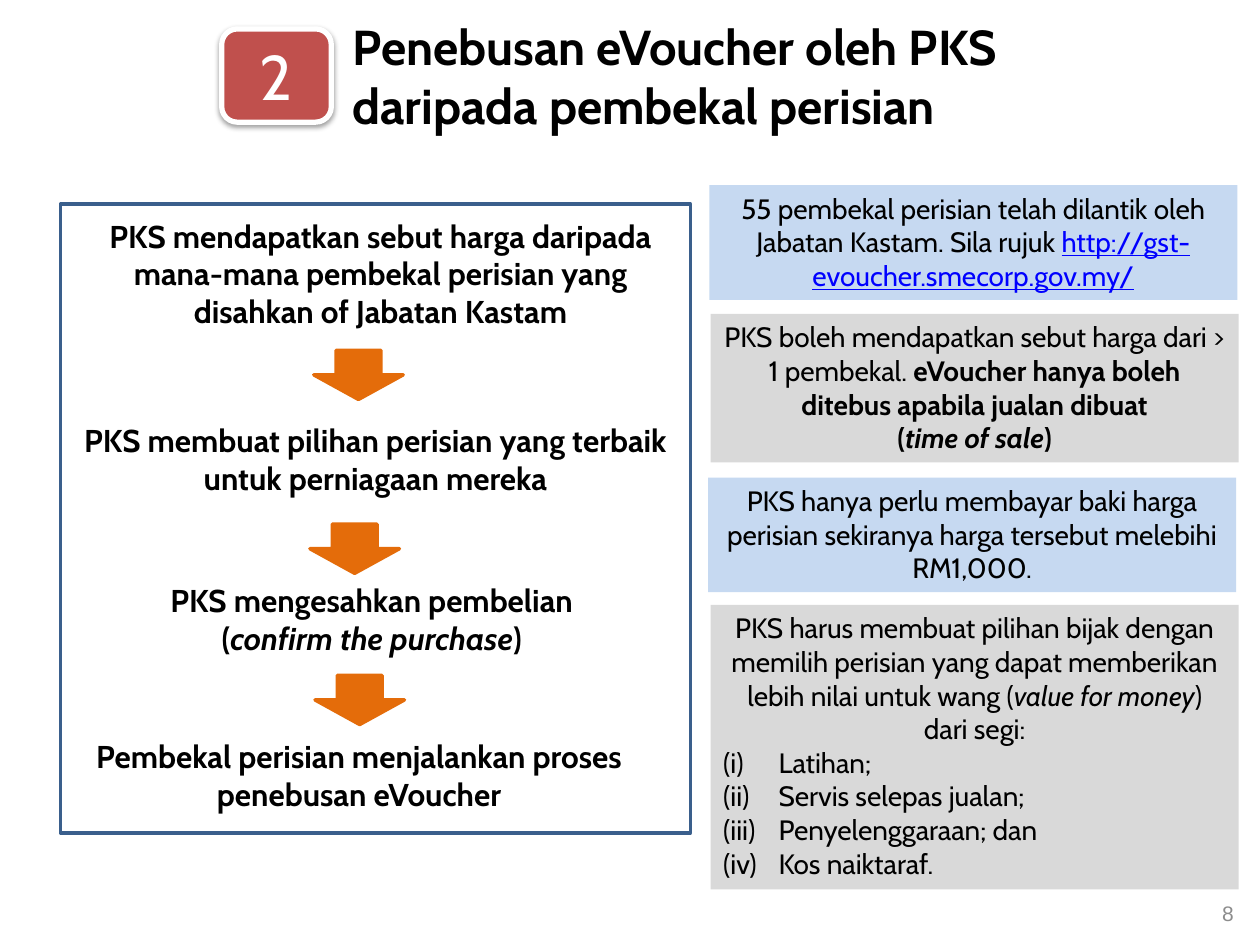
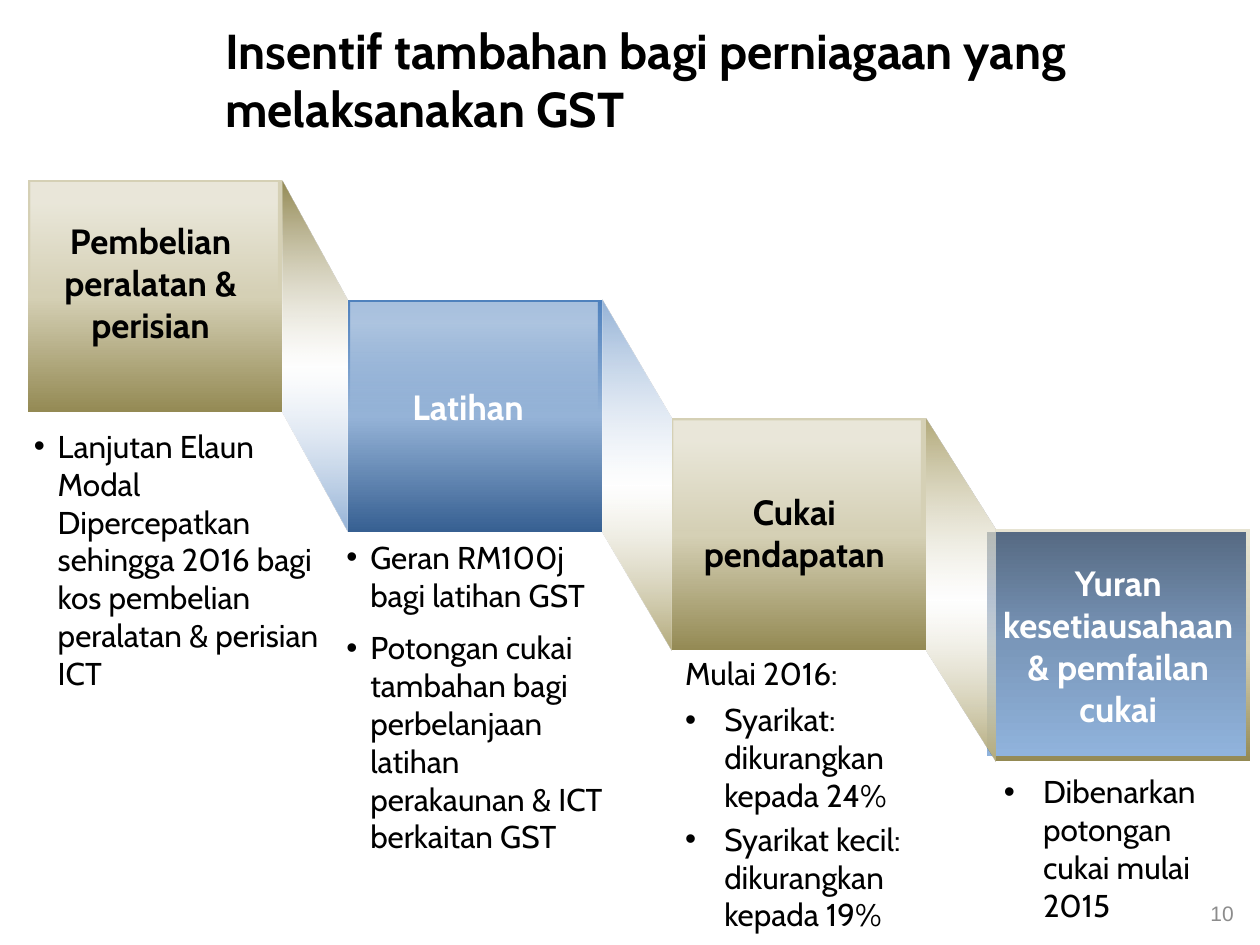
import lxml.etree
import pptx
import pptx.dml.color
import pptx.enum.shapes
import pptx.enum.text
import pptx.oxml.ns
import pptx.util

Inches = pptx.util.Inches
Pt = pptx.util.Pt
qn = pptx.oxml.ns.qn
SHAPE = pptx.enum.shapes.MSO_SHAPE
ALIGN = pptx.enum.text.PP_ALIGN
ANCHOR = pptx.enum.text.MSO_ANCHOR

FONT = "Cabin"
COLOR = {
    "black": "000000", "white": "FFFFFF", "page": "8C8C8C", "link": "0000FF",
    "red": "C0504D", "orange": "E46C0A", "frame": "3A5F8C",
    "pale": "C6D9F1", "gray": "D9D9D9",
    "olive": "948A54", "khaki": "B3AA7A", "sand": "D5D0B5", "cream": "E6E3D2",
    "navy": "376092", "blue": "4F81BD", "sky": "95B3D7",
    "slate": "566A83", "steel": "7A97BA", "ice": "90B3DC",
}
BOX_W, BOX_H = 2.02, 1.84


def tint(name):
    return pptx.dml.color.RGBColor.from_string(COLOR[name])


def sub(parent, tag, **attrs):
    return lxml.etree.SubElement(parent, qn(tag), attrs)


def set_list(para, indent, tag, **attrs):
    """Give a paragraph a hanging indent and a bullet or number."""
    props = para._p.get_or_add_pPr()
    props.set("marL", str(Inches(indent)))
    props.set("indent", str(-Inches(indent)))
    if tag == "a:buChar":
        sub(props, "a:buFont", typeface="Arial")
    sub(props, tag, **attrs)


def write(shape, paras, size, color="black", bold=False, align=None,
          anchor=ANCHOR.TOP, font=FONT):
    """Fill a shape; a paragraph is a string or a list of (text, marks)."""
    frame = shape.text_frame
    frame.word_wrap = True
    frame.vertical_anchor = anchor
    for i, parts in enumerate(paras):
        para = frame.add_paragraph() if i else frame.paragraphs[0]
        para.alignment = align
        if isinstance(parts, str):
            parts = [(parts, "")]
        for text, marks in parts:
            run = para.add_run()
            run.text = text
            run.font.name = font
            run.font.size = Pt(size)
            run.font.bold = bold or "b" in marks
            run.font.italic = "i" in marks
            run.font.underline = "u" in marks
            run.font.color.rgb = tint("link" if "u" in marks else color)
    return frame.paragraphs


def add_text(slide, at, paras, size, **style):
    box = slide.shapes.add_textbox(*map(Inches, at))
    return write(box, paras, size, **style)


def finish(shape, fill=None, line=None, width=2):
    shape.shadow.inherit = False
    if fill:
        shape.fill.solid()
        shape.fill.fore_color.rgb = tint(fill)
    else:
        shape.fill.background()
    if line:
        shape.line.color.rgb = tint(line)
        shape.line.width = Pt(width)
    else:
        shape.line.fill.background()
    return shape


def add_shape(slide, kind, at, *look):
    return finish(slide.shapes.add_shape(kind, *map(Inches, at)), *look)


def shade(shape, stops, up=True):
    """Set a vertical gradient of (percent, color, optional opacity)."""
    shape.fill.gradient()
    shape.fill.gradient_angle = 90 if up else 270
    row = shape._element.spPr.find(qn("a:gradFill")).find(qn("a:gsLst"))
    for old in list(row):
        row.remove(old)
    for place, color, *alpha in stops:
        stop = sub(row, "a:gs", pos=str(place * 1000))
        rgb = sub(stop, "a:srgbClr", val=COLOR[color])
        if alpha:
            sub(rgb, "a:alpha", val=str(alpha[0] * 1000))


def add_slide(deck, title, at, page):
    slide = deck.slides.add_slide(deck.slide_layouts[6])
    add_text(slide, (9.17, 7.05, 0.72, 0.4), [page], 12, color="page",
             align=ALIGN.RIGHT, anchor=ANCHOR.MIDDLE, font="Arial")
    add_text(slide, at, [title], 28, bold=True)
    return slide


def add_badge(slide, text):
    badge = add_shape(slide, SHAPE.ROUNDED_RECTANGLE, (1.76, 0.23, 0.87, 0.74),
                      "red", "white", 3)
    effects = badge._element.spPr.find(qn("a:effectLst"))
    shadow = sub(effects, "a:outerShdw", blurRad=str(Pt(3.1)),
                 dist=str(Pt(1.6)), dir="5400000", rotWithShape="0")
    sub(sub(shadow, "a:srgbClr", val=COLOR["black"]), "a:alpha", val="38000")
    write(badge, [text], 36, color="white", align=ALIGN.CENTER,
          anchor=ANCHOR.MIDDLE)


def add_note(slide, at, fill, paras):
    note = add_shape(slide, SHAPE.RECTANGLE, at, fill)
    return write(note, paras, 16, align=ALIGN.CENTER)


def add_box(slide, left, top, stops):
    box = add_shape(slide, SHAPE.RECTANGLE, (left, top, BOX_W, BOX_H))
    shade(box, stops)


def add_gloss(slide, left, top):
    gloss = add_shape(slide, SHAPE.RECTANGLE,
                      (left + 0.02, top + 0.02, 1.96, 1.78))
    shade(gloss, [(9, "white", 50), (49, "white", 0)], up=False)


def add_fold(slide, start, end, low, high):
    """Join the right side of one box to the left side of the next."""
    (x1, y1), (x2, y2) = start, end
    x1 += BOX_W
    points = [(x1, y1), (x2, y2), (x2, y2 + BOX_H), (x1, y1 + BOX_H)]
    points = [(Inches(x), Inches(y)) for x, y in points]
    path = slide.shapes.build_freeform(*points[0])
    path.add_line_segments(points[1:], close=True)
    fold = finish(path.convert_to_shape())
    shade(fold, [(0, low), (47, "white", 50), (100, high)])


def add_points(slide, at, paras, indent, gaps=(), lead=0):
    """Add a bulleted list; the first `lead` paragraphs have no bullet."""
    paras = add_text(slide, at, paras, 18)
    for para in paras[lead:]:
        set_list(para, indent, "a:buChar", char="•")
    for para, gap in zip(paras[1:], gaps):
        para.space_before = Pt(gap)


def make_redeem(deck):
    slide = add_slide(deck, "Penebusan eVoucher oleh PKS daripada pembekal perisian",
                      (2.7, 0.08, 6.2, 1.04), "8")
    add_badge(slide, "2")

    steps = [
        (0.52, 1.67, 1.01, ["PKS mendapatkan sebut harga daripada mana-mana "
                            "pembekal perisian yang disahkan of Jabatan Kastam"]),
        (0.48, 3.29, 0.71, ["PKS membuat pilihan perisian yang terbaik untuk "
                            "perniagaan mereka"]),
        (0.45, 4.56, 0.71, ["PKS mengesahkan pembelian",
                            [("(", ""), ("confirm the purchase", "i"), (")", "")]]),
        (0.35, 5.8, 0.71, ["Pembekal perisian menjalankan proses penebusan eVoucher"]),
    ]
    for left, top, height, paras in steps:
        add_text(slide, (left, top, 5, height), paras, 18, bold=True,
                 align=ALIGN.CENTER)
    for left, top in [(2.49, 2.78), (2.46, 4.16), (2.5, 5.36)]:
        add_shape(slide, SHAPE.DOWN_ARROW, (left, top, 0.71, 0.39),
                  "orange", "orange")
    add_shape(slide, SHAPE.RECTANGLE, (0.48, 1.62, 5, 4.99), None, "frame")

    add_note(slide, (5.63, 1.47, 4.19, 0.91), "pale", [[
        ("55 pembekal perisian telah dilantik oleh Jabatan Kastam. Sila rujuk ", ""),
        ("http://gst-evoucher.smecorp.gov.my/", "u")]])
    add_note(slide, (5.64, 2.49, 4.19, 1.18), "gray", [
        [("PKS boleh mendapatkan sebut harga dari > 1 pembekal. ", ""),
         ("eVoucher hanya boleh ditebus apabila jualan dibuat", "b")],
        [("(", "b"), ("time of sale", "bi"), (")", "b")]])
    add_note(slide, (5.62, 3.79, 4.19, 0.91), "pale", [
        "PKS hanya perlu membayar baki harga perisian sekiranya harga "
        "tersebut melebihi RM1,000."])
    advice = add_note(slide, (5.64, 4.8, 4.19, 2.26), "gray", [
        [("PKS harus membuat pilihan bijak dengan memilih perisian yang dapat "
          "memberikan lebih nilai untuk wang (", ""),
         ("value for money", "i"), (") dari segi:", "")],
        "Latihan;", "Servis selepas jualan;", "Penyelenggaraan; dan",
        "Kos naiktaraf."])
    for para in advice[1:]:
        para.alignment = ALIGN.LEFT
        set_list(para, 0.44, "a:buAutoNum", type="romanLcParenBoth")


def make_bonus(deck):
    slide = add_slide(deck, "Insentif tambahan bagi perniagaan yang melaksanakan GST",
                      (1.69, 0.11, 8.27, 1.04), "10")

    spots = [(0.22, 1.43), (2.76, 2.38), (5.33, 3.32), (7.9, 4.2)]
    sandy = [(0, "olive"), (50, "sand"), (100, "sand")]
    bluish = [(0, "navy"), (50, "sky"), (100, "blue")]
    add_box(slide, *spots[3], [(0, "olive"), (48, "sand"), (100, "cream")])
    cover = add_shape(slide, SHAPE.RECTANGLE, (7.83, 4.22, 2.06, 1.78))
    shade(cover, [(0, "slate"), (50, "steel"), (100, "ice")], up=False)
    folds = [("sky", "olive"), ("khaki", "sky"), ("khaki", "khaki")]
    for start, end, ends in zip(spots, spots[1:], folds):
        add_fold(slide, start, end, *ends)
    for spot, stops in zip(spots, [sandy, bluish, sandy]):
        add_box(slide, *spot, stops)
        add_gloss(slide, *spot)

    heads = [
        ((0.27, 1.69, 1.85, 1.11), "Pembelian peralatan & perisian", "black"),
        ((2.79, 3.01, 1.85, 0.44), "Latihan", "white"),
        ((5.38, 3.84, 1.85, 0.77), "Cukai pendapatan", "black"),
        ((7.79, 4.41, 2.17, 1.45), "Yuran kesetiausahaan & pemfailan cukai", "white"),
    ]
    for at, text, color in heads:
        add_text(slide, at, [text], 20, color=color, bold=True,
                 align=ALIGN.CENTER)

    add_points(slide, (0.17, 3.34, 2.47, 2.52), [
        "Lanjutan Elaun Modal Dipercepatkan sehingga 2016 bagi kos pembelian "
        "peralatan & perisian ICT"], 0.19)
    add_points(slide, (2.65, 4.22, 2.25, 2.95), [
        "Geran RM100j bagi latihan GST",
        "Potongan cukai tambahan bagi perbelanjaan latihan perakaunan & ICT "
        "berkaitan GST"], 0.19, gaps=[8.5])
    add_points(slide, (5.34, 5.14, 2.06, 2.39), [
        "Mulai 2016:", "Syarikat: dikurangkan kepada 24%",
        "Syarikat kecil: dikurangkan kepada 19%"], 0.31, gaps=[5, 3.5], lead=1)
    add_points(slide, (7.87, 6.08, 2.03, 1.31), [
        "Dibenarkan potongan cukai mulai 2015"], 0.31)


def main():
    deck = pptx.Presentation()
    deck.slide_width = Inches(10)
    deck.slide_height = Inches(7.5)
    make_redeem(deck)
    make_bonus(deck)
    deck.save("out.pptx")


if __name__ == "__main__":
    main()
